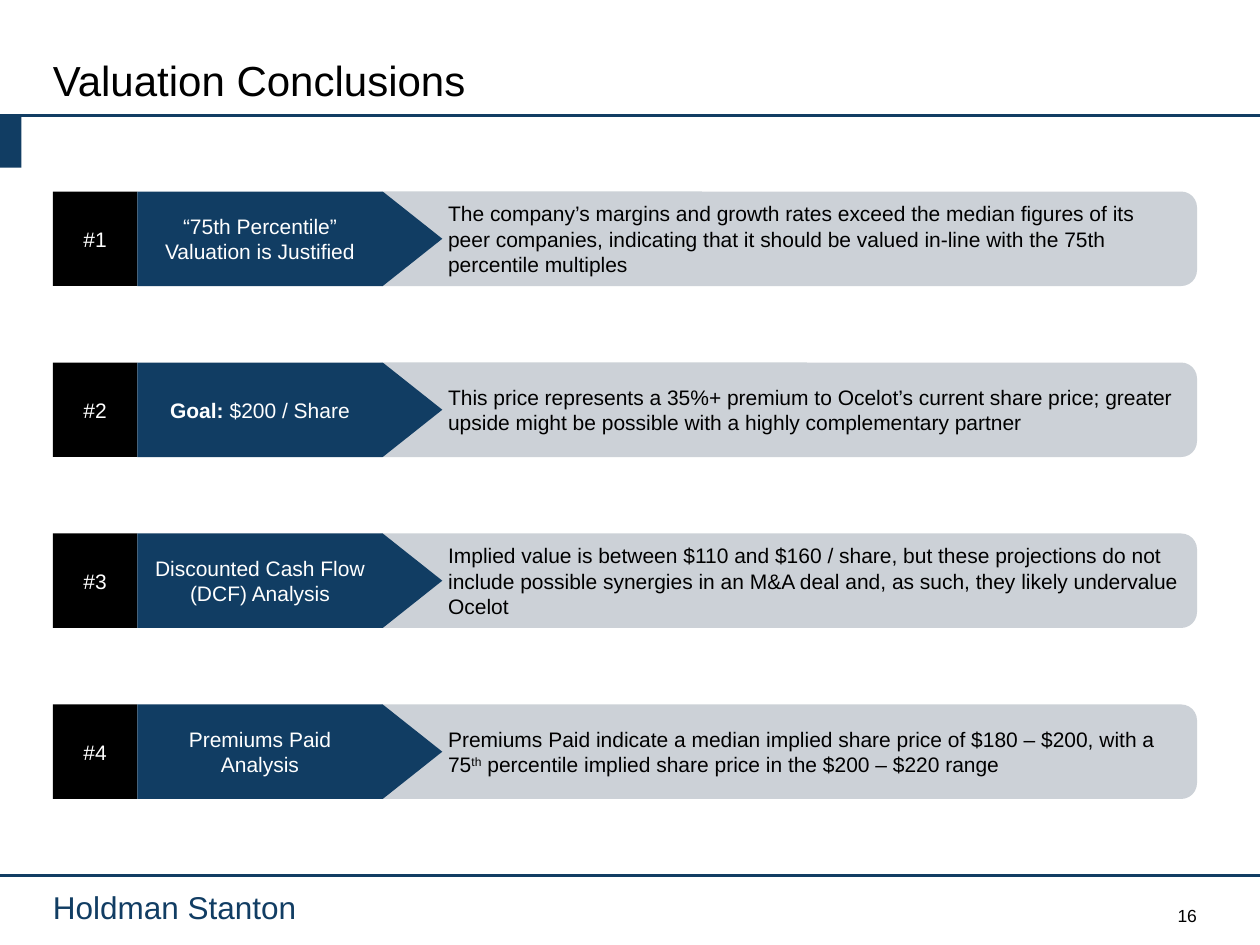
import dataclasses

import pptx
import pptx.dml.color
import pptx.enum.shapes
import pptx.enum.text
import pptx.util
from lxml import etree

Inches = pptx.util.Inches
Shape = pptx.enum.shapes.MSO_SHAPE
Align = pptx.enum.text.PP_ALIGN
Anchor = pptx.enum.text.MSO_ANCHOR


@dataclasses.dataclass(frozen=True)
class Theme:
    font: str = "Arial"
    navy: str = "113D63"
    grey: str = "CCD1D7"
    black: str = "000000"
    white: str = "FFFFFF"
    title_size: int = 24
    brand_size: int = 18
    body_size: int = 12
    number_size: int = 10
    rule_width: float = 1.75


THEME = Theme()
SLIDE_WIDTH, SLIDE_HEIGHT = 10, 7.5
LEFT, RIGHT = 0.42, 9.5
ARROW_LEFT, ARROW_WIDTH = 1.09, 2.42
PANEL_LEFT = 2.92
ROW_TOP, ROW_PITCH, ROW_HEIGHT = 1.52, 1.357, 0.75
HEADER_RULE, FOOTER_RULE = 0.92, 6.95
DEFAULT_INSETS = (0.1, 0.05, 0.1, 0.05)
PANEL_INSETS = (0.6, 0.05, 0.1, 0.05)
NO_INSETS = (0, 0, 0, 0)

CONCLUSIONS = [
    (
        [("“75th Percentile” Valuation is Justified", "")],
        [("The company’s margins and growth rates exceed the median figures of its "
          "peer companies, indicating that it should be valued in-line with the 75th "
          "percentile multiples", "")],
    ),
    (
        [("Goal: ", "bold"), ("$200 / Share", "")],
        [("This price represents a 35%+ premium to Ocelot’s current share price; greater "
          "upside might be possible with a highly complementary partner", "")],
    ),
    (
        [("Discounted Cash Flow (DCF) Analysis", "")],
        [("Implied value is between $110 and $160 / share, but these projections do not "
          "include possible synergies in an M&A deal and, as such, they likely undervalue "
          "Ocelot", "")],
    ),
    (
        [("Premiums Paid Analysis", "")],
        [("Premiums Paid indicate a median implied share price of $180 – $200, with a 75", ""),
         ("th", "superscript"),
         (" percentile implied share price in the $200 – $220 range", "")],
    ),
]


def rgb(color):
    return pptx.dml.color.RGBColor.from_string(color)


def box(left, top, width, height):
    return [Inches(length) for length in (left, top, width, height)]


def write_text(shape, runs, size, color, align=Align.LEFT, anchor=Anchor.MIDDLE,
               insets=DEFAULT_INSETS):
    frame = shape.text_frame
    frame.word_wrap = True
    frame.auto_size = pptx.enum.text.MSO_AUTO_SIZE.NONE
    frame.vertical_anchor = anchor
    (frame.margin_left, frame.margin_top,
     frame.margin_right, frame.margin_bottom) = map(Inches, insets)
    paragraph = frame.paragraphs[0]
    paragraph.alignment = align
    paragraph.font.name = THEME.font
    paragraph.font.size = pptx.util.Pt(size)
    paragraph.font.color.rgb = rgb(color)
    for text, style in runs:
        run = paragraph.add_run()
        run.text = text
        if style == "bold":
            run.font.bold = True
        elif style == "superscript":
            run._r.get_or_add_rPr().set("baseline", "30000")


def add_block(slide, kind, bounds, fill):
    shape = slide.shapes.add_shape(kind, *box(*bounds))
    shape.shadow.inherit = False
    shape.fill.solid()
    shape.fill.fore_color.rgb = rgb(fill)
    shape.line.fill.background()
    return shape


def add_rule(slide, top):
    rule = slide.shapes.add_connector(
        pptx.enum.shapes.MSO_CONNECTOR.STRAIGHT,
        0, Inches(top), Inches(SLIDE_WIDTH), Inches(top))
    rule.line.color.rgb = rgb(THEME.navy)
    rule.line.width = pptx.util.Pt(THEME.rule_width)
    etree.SubElement(rule._element.spPr, pptx.oxml.ns.qn("a:effectLst"))


def add_label(slide, bounds, text, size, color, align, anchor):
    label = slide.shapes.add_textbox(*box(*bounds))
    write_text(label, [(text, "")], size, color, align, anchor, NO_INSETS)


def add_title(slide, text):
    title = slide.shapes.title
    title.left, title.top, title.width, title.height = box(LEFT, 0.43, RIGHT - LEFT, 0.4)
    write_text(title, [(text, "")], THEME.title_size, THEME.black,
               Align.JUSTIFY, insets=NO_INSETS)


def add_conclusion(slide, row, heading, detail):
    top = ROW_TOP + row * ROW_PITCH
    panel = add_block(slide, Shape.ROUNDED_RECTANGLE,
                      (PANEL_LEFT, top, RIGHT - PANEL_LEFT, ROW_HEIGHT), THEME.grey)
    write_text(panel, detail, THEME.body_size, THEME.black, insets=PANEL_INSETS)
    number = add_block(slide, Shape.RECTANGLE,
                       (LEFT, top, ARROW_LEFT - LEFT, ROW_HEIGHT), THEME.black)
    write_text(number, [(f"#{row + 1}", "")], THEME.body_size, THEME.white, Align.CENTER)
    arrow = add_block(slide, Shape.RIGHT_ARROW,
                      (ARROW_LEFT, top, ARROW_WIDTH, ROW_HEIGHT), THEME.navy)
    arrow.adjustments[0] = 1
    arrow.adjustments[1] = 0.63
    write_text(arrow, heading, THEME.body_size, THEME.white, Align.CENTER)


def main():
    presentation = pptx.Presentation()
    presentation.slide_width = Inches(SLIDE_WIDTH)
    presentation.slide_height = Inches(SLIDE_HEIGHT)
    slide = presentation.slides.add_slide(presentation.slide_layouts[5])
    add_title(slide, "Valuation Conclusions")
    add_rule(slide, HEADER_RULE)
    add_block(slide, Shape.RECTANGLE, (0, HEADER_RULE, 0.17, 0.41), THEME.navy)
    add_rule(slide, FOOTER_RULE)
    add_label(slide, (LEFT, 7.05, 2.5, 0.3), "Holdman Stanton", THEME.brand_size,
              THEME.navy, Align.LEFT, Anchor.TOP)
    for row, (heading, detail) in enumerate(CONCLUSIONS):
        add_conclusion(slide, row, heading, detail)
    add_label(slide, (7.17, 7.18, 2.33, 0.17), "16", THEME.number_size,
              THEME.black, Align.RIGHT, Anchor.BOTTOM)
    presentation.save("out.pptx")


if __name__ == "__main__":
    main()
